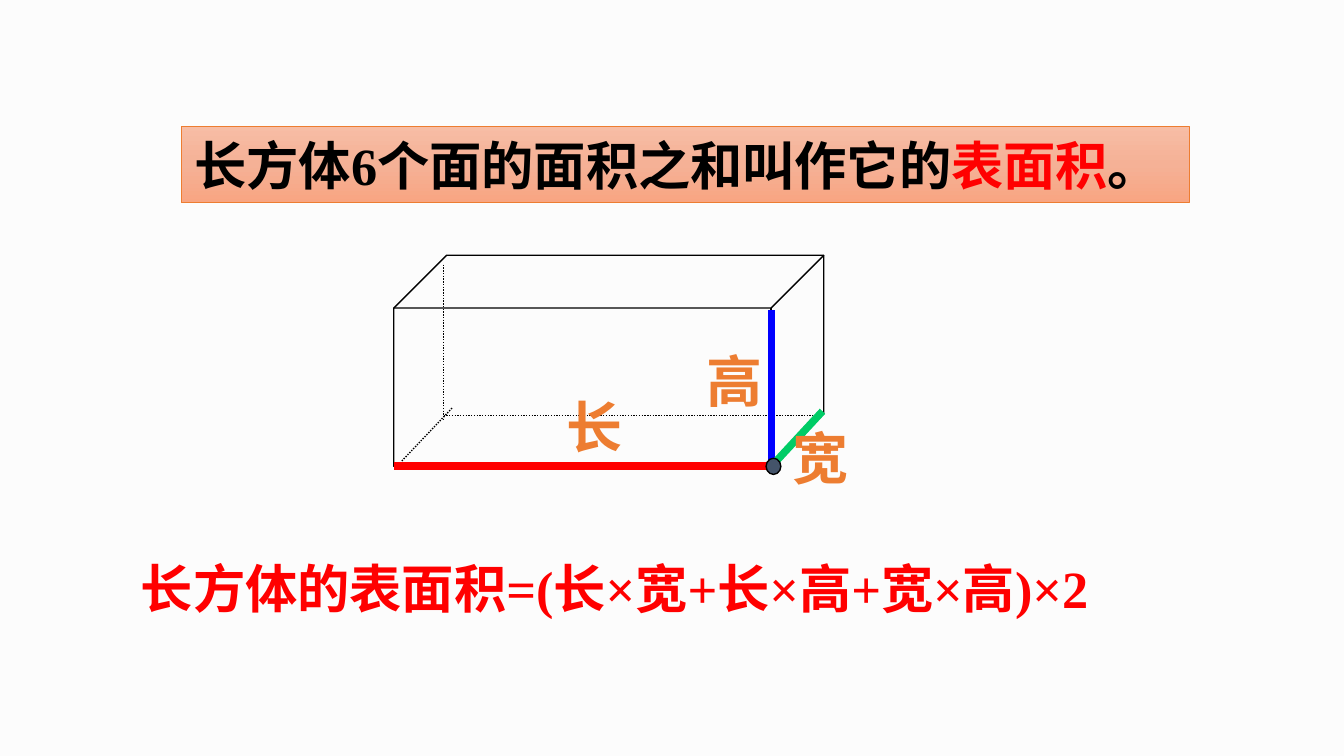
from copy import deepcopy

from pptx import Presentation
from pptx.dml.color import RGBColor
from pptx.enum.dml import MSO_LINE
from pptx.enum.shapes import MSO_CONNECTOR, MSO_SHAPE
from pptx.enum.text import MSO_ANCHOR, PP_ALIGN
from pptx.oxml.ns import qn
from pptx.util import Inches, Pt
from lxml import etree

BLACK = RGBColor(0x00, 0x00, 0x00)
RED = RGBColor(0xFF, 0x00, 0x00)
BLUE = RGBColor(0x00, 0x00, 0xFF)
GREEN = RGBColor(0x00, 0xCC, 0x66)
ORANGE = RGBColor(0xED, 0x7D, 0x31)
SLATE = RGBColor(0x44, 0x54, 0x6A)
PAPER = RGBColor(0xFC, 0xFC, 0xFC)
PEACH = [RGBColor(0xF7, 0xBD, 0xA5), RGBColor(0xF5, 0xB1, 0x96),
         RGBColor(0xF8, 0xA5, 0x82)]
CJK_FONT = "Noto Sans CJK SC"
LATIN_FONT = "Times New Roman"

# A 16:9 page
deck = Presentation()
deck.slide_width = Inches(10)
deck.slide_height = Inches(10) * 9 // 16
page = deck.slides.add_slide(deck.slide_layouts[6])
page.background.fill.solid()
page.background.fill.fore_color.rgb = PAPER


def write(box, spans, size, font):
    """Fill a shape with one left-aligned bold paragraph of coloured spans."""
    frame = box.text_frame
    frame.word_wrap = True
    frame.vertical_anchor = MSO_ANCHOR.TOP
    para = frame.paragraphs[0]
    para.alignment = PP_ALIGN.LEFT
    for text, color in spans:
        span = para.add_run()
        span.text = text
        span.font.size = Pt(size)
        span.font.bold = True
        span.font.name = font
        span.font.color.rgb = color
        east_asian = etree.SubElement(span.font._element, qn("a:ea"))
        east_asian.set("typeface", CJK_FONT)


# Cuboid
cuboid = page.shapes.add_shape(MSO_SHAPE.CUBE, Inches(2.93), Inches(1.9),
                               Inches(3.2), Inches(1.57))
cuboid.shadow.inherit = False
cuboid.adjustments[0] = 0.25
cuboid.fill.background()
cuboid.line.color.rgb = BLACK
cuboid.line.width = Pt(0.75)

# Hidden edges (dotted), then length, height and width
edges = [
    (3.3, 3.09, 6.05, 3.09, BLACK, 0.75, True),
    (3.3, 1.97, 3.3, 3.13, BLACK, 0.75, True),
    (2.99, 3.43, 3.37, 3.03, BLACK, 0.75, True),
    (2.93, 3.47, 5.74, 3.47, RED, 4.25, False),
    (5.74, 2.31, 5.74, 3.47, BLUE, 4, False),
    (5.74, 3.47, 6.12, 3.06, GREEN, 4, False),
]
for x1, y1, x2, y2, color, width, dotted in edges:
    edge = page.shapes.add_connector(MSO_CONNECTOR.STRAIGHT, Inches(x1),
                                     Inches(y1), Inches(x2), Inches(y2))
    edge.line.color.rgb = color
    edge.line.width = Pt(width)
    if dotted:
        edge.line.dash_style = MSO_LINE.ROUND_DOT
    etree.SubElement(edge._element.spPr, qn("a:effectLst"))

# Shared corner
corner = page.shapes.add_shape(MSO_SHAPE.OVAL, Inches(5.7), Inches(3.41),
                               Inches(0.11), Inches(0.12))
corner.shadow.inherit = False
corner.fill.solid()
corner.fill.fore_color.rgb = SLATE
corner.line.color.rgb = BLACK
corner.line.width = Pt(0.75)

# Edge labels
for text, left, top, width in [("长", 4.12, 2.87, 0.75),
                               ("宽", 5.8, 3.1, 0.81),
                               ("高", 5.16, 2.53, 0.69)]:
    label = page.shapes.add_textbox(Inches(left), Inches(top),
                                    Inches(width), Inches(0.61))
    write(label, [(text, ORANGE)], 30, CJK_FONT)

# Formula
formula = page.shapes.add_textbox(Inches(0.95), Inches(4.09),
                                  Inches(8.31), Inches(0.57))
write(formula, [("长方体的表面积=(长×宽+长×高+宽×高)×2", RED)], 28, LATIN_FONT)

# Definition banner with a three-stop vertical gradient
banner = page.shapes.add_shape(MSO_SHAPE.RECTANGLE, Inches(1.35), Inches(0.94),
                               Inches(7.5), Inches(0.57))
banner.shadow.inherit = False
banner.fill.gradient()
banner.fill.gradient_angle = 270
stop_list = banner._element.spPr.find(".//" + qn("a:gsLst"))
stop_list.insert(1, deepcopy(stop_list[0]))
for stop, color, position in zip(banner.fill.gradient_stops, PEACH, (0, 0.5, 1)):
    stop.color.rgb = color
    stop.position = position
banner.line.color.rgb = ORANGE
banner.line.width = Pt(0.5)
write(banner, [("长方体6个面的面积之和叫作它的", BLACK), ("表面积", RED),
               ("。", BLACK)], 28, LATIN_FONT)

deck.save("out.pptx")
